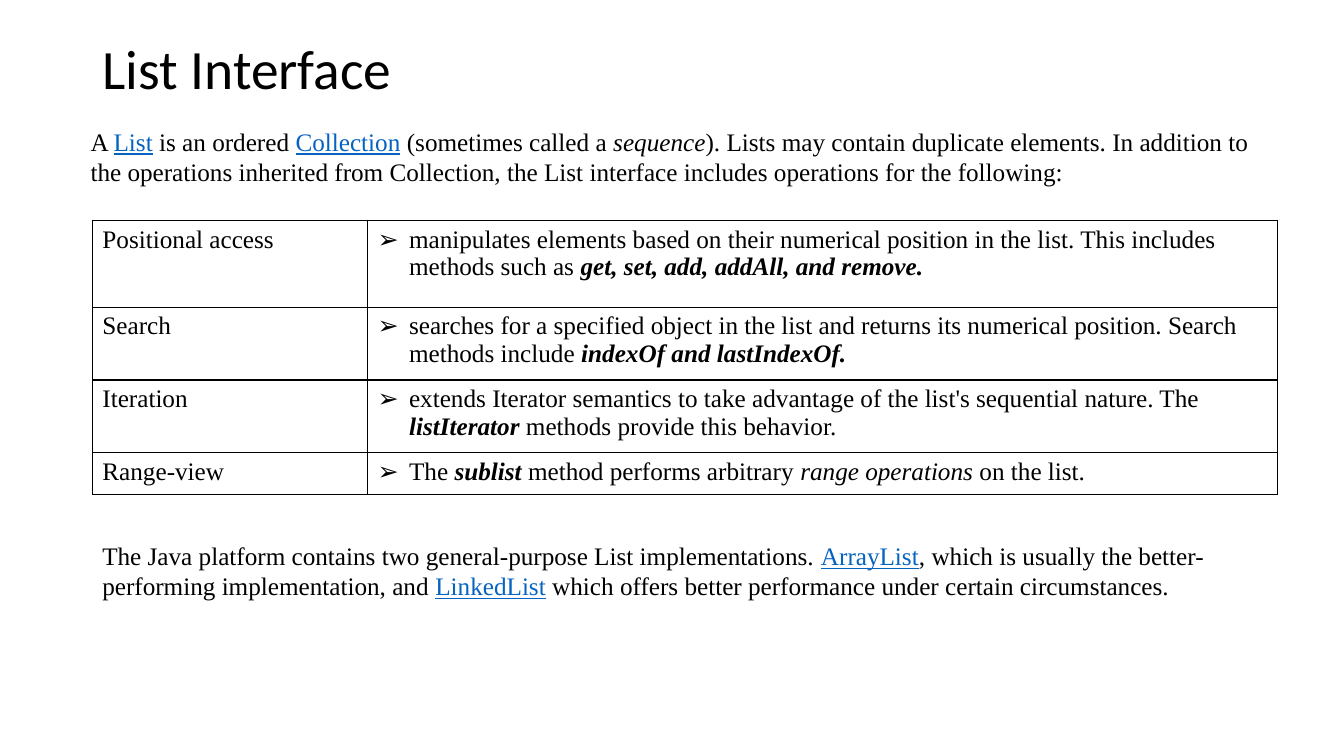
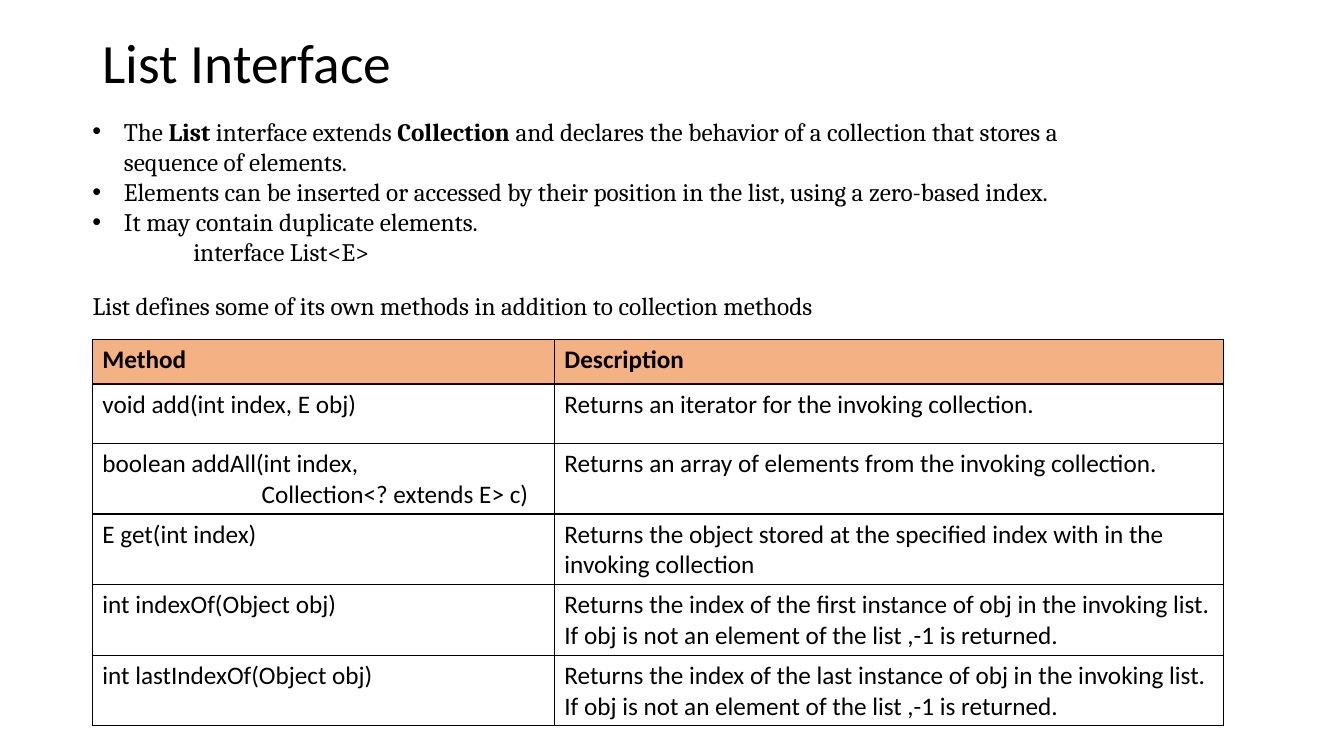
"""Build two slides about the List interface: an overview and its methods."""
from lxml import etree
from pptx import Presentation
from pptx.dml.color import RGBColor
from pptx.enum.text import MSO_ANCHOR, MSO_AUTO_SIZE, PP_ALIGN
from pptx.oxml.ns import qn
from pptx.util import Pt

TOP, MIDDLE = MSO_ANCHOR.TOP, MSO_ANCHOR.MIDDLE
LEFT, NO_FIT = PP_ALIGN.LEFT, MSO_AUTO_SIZE.NONE
COLOURS = {"text": "000000", "link": "0563C1", "header": "F4B183", "border": "000000"}
SERIF, SANS, BOOK = "Times New Roman", "Calibri", "Cambria"
TITLE_SIZE, BODY_SIZE = 39.6, 18
HANGING, CODE_INDENT = 22.5, 72
TITLE_ONLY = 5


def write(frame, paragraphs, font, size=BODY_SIZE, spacing=None):
    """Fill a frame with (marker, spans); a span is (text, styles b, i or u)."""
    for number, (marker, spans) in enumerate(paragraphs):
        para = frame.add_paragraph() if number else frame.paragraphs[0]
        para.alignment = LEFT
        if spacing:
            para.line_spacing = spacing
        properties = para._p.get_or_add_pPr()
        if marker == "code":
            properties.set("marL", str(Pt(CODE_INDENT)))
        elif marker:
            properties.set("marL", str(Pt(HANGING)))
            properties.set("indent", str(-Pt(HANGING)))
            etree.SubElement(properties, qn("a:buFont")).set("typeface", "Arial")
            etree.SubElement(properties, qn("a:buChar")).set("char", marker)
        for text, styles in spans:
            span = para.add_run()
            span.text = text
            span.font.name, span.font.size = font, Pt(size)
            span.font.bold, span.font.italic = "b" in styles, "i" in styles
            span.font.underline = "u" in styles
            colour = COLOURS["link" if "u" in styles else "text"]
            span.font.color.rgb = RGBColor.from_string(colour)


def plain(text, styles=""):
    """Return one unmarked paragraph of a single span."""
    return [("", [(text, styles)])]


operations = [
    ("Positional access", [
        ("manipulates elements based on their numerical position in the list. "
         "This includes methods such as ", ""),
        ("get, set, add, addAll, and remove.", "bi")]),
    ("Search", [
        ("searches for a specified object in the list and returns its numerical "
         "position. Search methods include ", ""),
        ("indexOf and lastIndexOf.", "bi")]),
    ("Iteration", [
        ("extends Iterator semantics to take advantage of the list's sequential "
         "nature. The ", ""),
        ("listIterator", "bi"), (" methods provide this behavior.", "")]),
    ("Range-view", [
        ("The ", ""), ("sublist", "bi"), (" method performs arbitrary ", ""),
        ("range operations", "i"), (" on the list.", "")]),
]
methods = [
    (["void add(int index, E obj)"],
     "Returns an iterator for the invoking collection."),
    (["boolean addAll(int index,",
      "                            Collection<? extends E> c)"],
     "Returns an array of elements from the invoking collection."),
    (["E get(int index)"],
     "Returns the object stored at the specified index with in the invoking collection"),
]
for place in ("first", "last"):
    name = "indexOf" if place == "first" else "lastIndexOf"
    methods.append((
        [f"int {name}(Object obj)"],
        f"Returns the index of the {place} instance of obj in the invoking list. "
        "If obj is not an element of the list ,-1 is returned."))

slides = [
    {
        "title": (66, 28.8, 828, 44),
        "boxes": [
            ((57.6, 86.5, 867, 58), SERIF, [("", [
                ("A ", ""), ("List", "u"), (" is an ordered ", ""),
                ("Collection", "u"), (" (sometimes called a ", ""), ("sequence", "i"),
                ("). Lists may contain duplicate elements. In addition to the operations "
                 "inherited from Collection, the List interface includes operations "
                 "for the following:", "")])]),
            ((66, 382.3, 867, 51), SERIF, [("", [
                ("The Java platform contains two general-purpose List implementations. ", ""),
                ("ArrayList", "u"),
                (", which is usually the better-performing implementation, and ", ""),
                ("LinkedList", "u"),
                (" which offers better performance under certain circumstances.", "")])]),
        ],
        "table": (66, 157.5), "font": SERIF, "header": False,
        "columns": [196.5, 650], "heights": [62, 52, 52, 29.5],
        "rows": [[plain(name), [("➢", spans)]] for name, spans in operations],
    },
    {
        "title": (66, 23, 828, 47),
        "boxes": [
            ((59, 79.2, 764, 117), BOOK, [
                ("•", [("The ", ""), ("List ", "b"), ("interface extends ", ""),
                       ("Collection ", "b"),
                       ("and declares the behavior of a collection that stores a "
                        "sequence of elements.", "")]),
                ("•", [("Elements can be inserted or accessed by their position in the "
                        "list, using a zero-based index.", "")]),
                ("•", [("It may contain duplicate elements.", "")]),
                ("code", [("interface List<E>", "")])]),
            ((59, 203.8, 550, 29), BOOK, plain(
                "List defines some of its own methods in addition to collection methods")),
        ],
        "table": (66, 242.6), "font": SANS, "header": True,
        "columns": [330, 478], "heights": [31.7] + [42.5] * 5,
        "rows": [[plain("Method", "b"), plain("Description", "b")]] + [
            [[("", [(line, "")]) for line in lines], plain(description)]
            for lines, description in methods],
    },
]

deck = Presentation()
deck.slide_width, deck.slide_height = Pt(960), Pt(540)

for content in slides:
    page = deck.slides.add_slide(deck.slide_layouts[TITLE_ONLY])
    title = page.shapes.title
    title.left, title.top, title.width, title.height = map(Pt, content["title"])
    title.text_frame.auto_size = NO_FIT
    title.text_frame.vertical_anchor = MIDDLE
    write(title.text_frame, plain("List Interface"), SANS, TITLE_SIZE, 0.9)

    for place, font, paragraphs in content["boxes"]:
        box = page.shapes.add_textbox(*map(Pt, place))
        box.text_frame.word_wrap = True
        box.text_frame.vertical_anchor = TOP
        write(box.text_frame, paragraphs, font)

    columns, heights = content["columns"], content["heights"]
    left, top = content["table"]
    table = page.shapes.add_table(
        len(heights), len(columns), Pt(left), Pt(top),
        Pt(sum(columns)), Pt(sum(heights))).table
    table.first_row, table.horz_banding = content["header"], False
    for column, width in zip(table.columns, columns):
        column.width = Pt(width)
    for row_number, (height, cells) in enumerate(zip(heights, content["rows"])):
        table.rows[row_number].height = Pt(height)
        for column_number, paragraphs in enumerate(cells):
            cell = table.cell(row_number, column_number)
            write(cell.text_frame, paragraphs, content["font"])
            properties = cell._tc.get_or_add_tcPr()
            for side in ("a:lnL", "a:lnR", "a:lnT", "a:lnB"):
                line = etree.SubElement(properties, qn(side), w=str(Pt(1)))
                fill = etree.SubElement(line, qn("a:solidFill"))
                etree.SubElement(fill, qn("a:srgbClr"), val=COLOURS["border"])
            if content["header"] and row_number == 0:
                cell.fill.solid()
                cell.fill.fore_color.rgb = RGBColor.from_string(COLOURS["header"])
            else:
                cell.fill.background()

deck.save("out.pptx")
